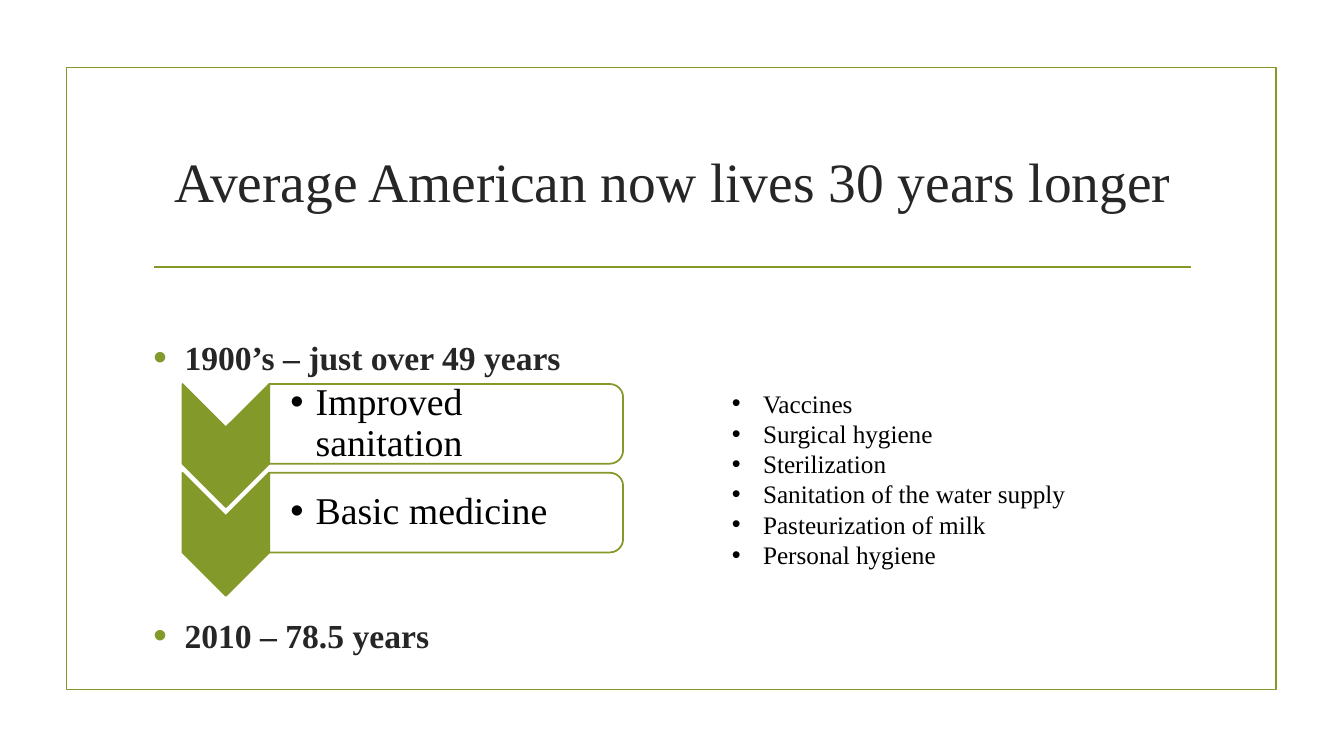
from lxml.etree import SubElement
from pptx import Presentation
from pptx.dml.color import RGBColor
from pptx.enum.shapes import MSO_CONNECTOR as CONNECTOR, MSO_SHAPE as SHAPE
from pptx.enum.text import MSO_ANCHOR as ANCHOR, MSO_AUTO_SIZE as AUTO_SIZE, PP_ALIGN as ALIGN
from pptx.oxml.ns import qn
from pptx.util import Pt

PX = 9144  # 100 px to the inch
FONT = "Times New Roman"
GREEN = RGBColor(0x83, 0x99, 0x2A)
DARK = RGBColor(0x26, 0x26, 0x26)
BLACK = RGBColor(0, 0, 0)
WHITE = RGBColor(255, 255, 255)


def add_bullet(paragraph, text, size, indent, text_color, bullet_color, bullet_percent=100, bold=False):
    props = paragraph._p.get_or_add_pPr()
    props.set("marL", str(indent * PX))
    props.set("indent", str(-indent * PX))
    color = SubElement(props, qn("a:buClr"))
    SubElement(color, qn("a:srgbClr"), val=str(bullet_color))
    SubElement(props, qn("a:buSzPct"), val=str(bullet_percent * 1000))
    SubElement(props, qn("a:buFont"), typeface="Arial")
    SubElement(props, qn("a:buChar"), char="•")
    paragraph.alignment = ALIGN.LEFT
    paragraph.space_before = paragraph.space_after = Pt(0)
    run = paragraph.add_run()
    run.text = text
    run.font.name, run.font.size, run.font.bold = FONT, Pt(size), bold
    run.font.color.rgb = text_color


def add_outlined(kind, left, top, width, height):
    shape = slide.shapes.add_shape(kind, left * PX, top * PX, width * PX, height * PX)
    shape.shadow.inherit = False
    shape.line.color.rgb = GREEN
    shape.line.width = Pt(1.25)
    return shape


prs = Presentation()
prs.slide_width, prs.slide_height = 1333 * PX, 750 * PX
slide = prs.slides.add_slide(prs.slide_layouts[1])

# Border and rule
border = add_outlined(SHAPE.RECTANGLE, 66, 67, 1200, 617)
border.fill.background()
rule = slide.shapes.add_connector(CONNECTOR.STRAIGHT, 153 * PX, 265 * PX, 1181 * PX, 265 * PX)
rule.line.color.rgb = GREEN
rule.line.width = Pt(1.25)
SubElement(rule._element.spPr, qn("a:effectLst"))

# Title
title = slide.shapes.title
title.left, title.top, title.width, title.height = 142 * PX, 107 * PX, 1050 * PX, 143 * PX
title.text_frame.auto_size = AUTO_SIZE.NONE
title.text_frame.vertical_anchor = ANCHOR.MIDDLE
heading = title.text_frame.paragraphs[0]
heading.alignment = ALIGN.CENTER
heading_run = heading.add_run()
heading_run.text = "Average American now lives 30 years longer"
heading_run.font.name, heading_run.font.size = FONT, Pt(39.6)
heading_run.font.color.rgb = DARK

# Life expectancy, with room for the steps between the two years
years = slide.placeholders[1]
years.left, years.top, years.width, years.height = 142 * PX, 280 * PX, 1050 * PX, 363 * PX
years_frame = years.text_frame
years_frame.auto_size = AUTO_SIZE.NONE
years_frame.vertical_anchor = ANCHOR.TOP
years_frame.margin_top = 54 * PX
first_year = years_frame.paragraphs[0]
last_year = years_frame.add_paragraph()
add_bullet(first_year, "1900’s – just over 49 years", 24, 31, DARK, GREEN, 115, True)
add_bullet(last_year, "2010 – 78.5 years", 24, 31, DARK, GREEN, 115, True)
last_year.space_before = Pt(170)

# Steps: a downward chevron beside a panel rounded on the right
for step, cause in enumerate(["Improved sanitation", "Basic medicine"]):
    offset = step * 88
    chevron = add_outlined(SHAPE.CHEVRON, 163, 399 + offset, 122, 86)
    chevron.rotation = 90
    chevron.fill.solid()
    chevron.fill.fore_color.rgb = GREEN

    panel = add_outlined(SHAPE.ROUND_2_SAME_RECTANGLE, 403, 245 + offset, 79, 351)
    panel.rotation = 90
    panel.fill.solid()
    panel.fill.fore_color.rgb = WHITE
    panel_color = panel._element.spPr.find(qn("a:solidFill"))[0]
    SubElement(panel_color, qn("a:alpha"), val="90000")

    label = slide.shapes.add_textbox(267 * PX, (385 + offset) * PX, 348 * PX, 71 * PX)
    label_frame = label.text_frame
    label_frame.word_wrap = True
    label_frame.vertical_anchor = ANCHOR.MIDDLE
    label_frame.margin_left, label_frame.margin_right = 21 * PX, 10 * PX
    label_frame.margin_top = label_frame.margin_bottom = 2 * PX
    add_bullet(label_frame.paragraphs[0], cause, 27, 25, BLACK, BLACK)
    label_frame.paragraphs[0].line_spacing = 0.9

# Advances
advances = ["Vaccines", "Surgical hygiene", "Sterilization", "Sanitation of the water supply",
            "Pasteurization of milk", "Personal hygiene"]
advances_frame = slide.shapes.add_textbox(716 * PX, 380 * PX, 582 * PX, 192 * PX).text_frame
advances_frame.word_wrap = True
for index, advance in enumerate(advances):
    paragraph = advances_frame.add_paragraph() if index else advances_frame.paragraphs[0]
    add_bullet(paragraph, advance, 18, 31, BLACK, BLACK)
    paragraph.line_spacing = Pt(21.6)

prs.save("out.pptx")
